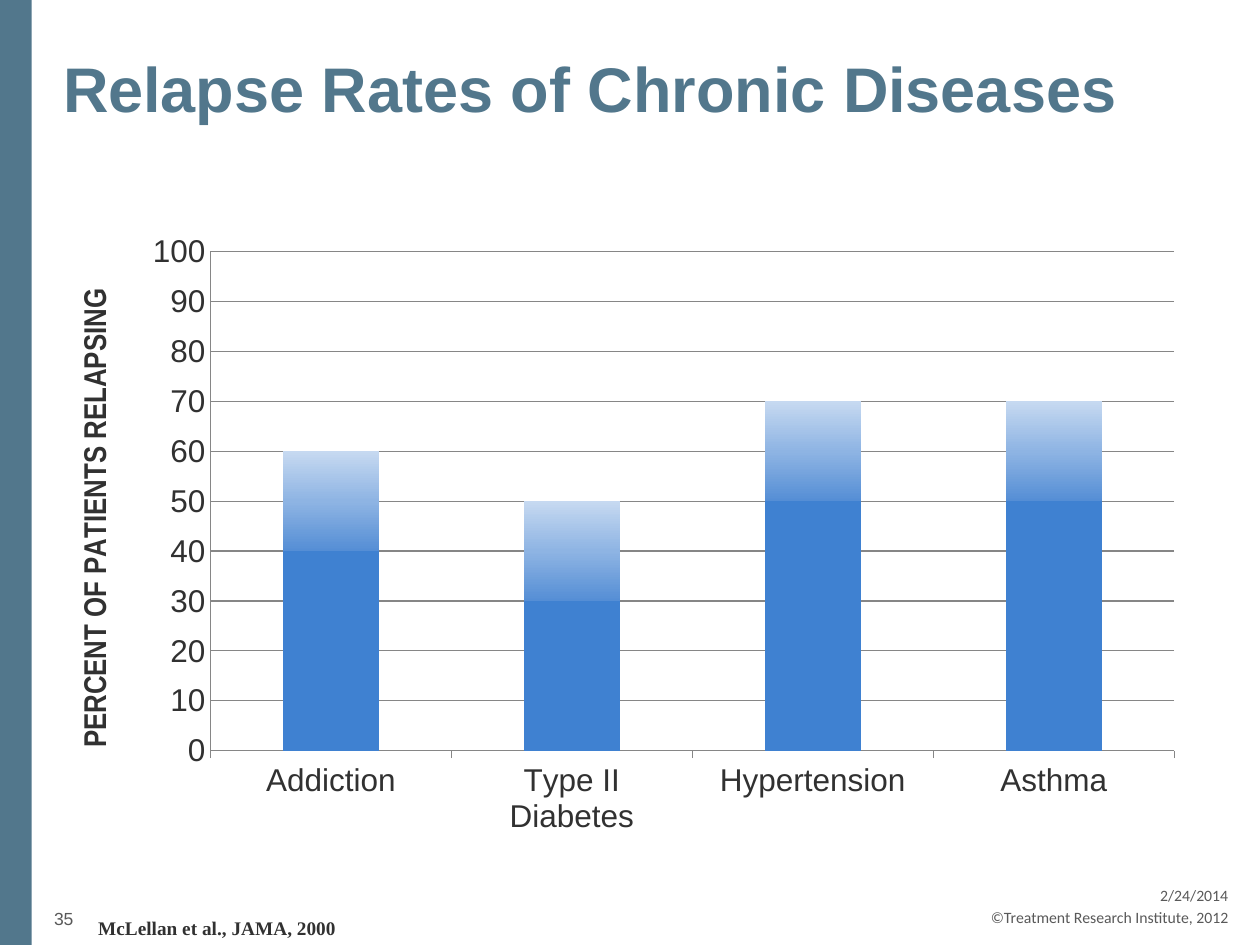
from dataclasses import dataclass
from lxml import etree
from pptx import Presentation
from pptx.chart import data as chartdata
from pptx.dml.color import RGBColor
from pptx.enum import chart as charts, shapes, text
from pptx.oxml import parse_xml
from pptx.oxml.ns import nsdecls, qn
from pptx.util import Cm, Pt


@dataclass
class Theme:
    accent = RGBColor.from_string("52778C")
    ink = RGBColor.from_string("313131")
    muted = RGBColor.from_string("595959")
    grid = RGBColor.from_string("868686")
    bar = RGBColor.from_string("3F81D1")
    gradient = ((0, "C6D9F1"), (50, "8EB4E3"), (100, "558ED5"))
    title_size = Pt(36)
    chart_size = Pt(18)
    source_size = Pt(11)
    number_size = Pt(10)
    footer_size = Pt(9)


theme = Theme()


def style(font, name, size, color, bold=False):
    font.name = name
    font.size = size
    font.bold = bold
    font.color.rgb = color


def place(parent, index, **values):
    for old in parent.findall(qn("c:layout")):
        parent.remove(old)
    layout = parse_xml(f"<c:layout {nsdecls('c')}><c:manualLayout/></c:layout>")
    for tag, value in values.items():
        etree.SubElement(layout[0], qn(f"c:{tag}")).set("val", str(value))
    parent.insert(index, layout)


deck = Presentation()
deck.slide_width, deck.slide_height = Cm(25.4), Cm(19.05)
page = deck.slides.add_slide(deck.slide_layouts[5])

band = page.shapes.add_shape(shapes.MSO_SHAPE.RECTANGLE, 0, 0, Cm(0.64), deck.slide_height)
band.shadow.inherit = False
band.fill.solid()
band.fill.fore_color.rgb = theme.accent
band.line.fill.background()

title = page.shapes.title
title.left, title.top, title.width, title.height = Cm(1.27), Cm(0.76), Cm(22.86), Cm(1.98)
frame = title.text_frame
frame.text = "Relapse Rates of Chronic Diseases"
frame.margin_left = 0
frame.vertical_anchor = text.MSO_ANCHOR.MIDDLE
frame.auto_size = text.MSO_AUTO_SIZE.NONE
frame.paragraphs[0].alignment = text.PP_ALIGN.LEFT
style(frame.paragraphs[0].font, "Arial", theme.title_size, theme.accent, True)

rates = chartdata.CategoryChartData()
rates.categories = ["Addiction", "Type II Diabetes", "Hypertension", "Asthma"]
rates.add_series("Series 1", (40, 30, 50, 50))
rates.add_series("Series 2", (20, 20, 20, 20))
chart = page.shapes.add_chart(
    charts.XL_CHART_TYPE.COLUMN_STACKED, Cm(1.27), Cm(4.45), Cm(22.86), Cm(12.57), rates
).chart
chart.has_legend = False
chart.has_title = False
style(chart.font, "Arial", theme.chart_size, theme.ink)

plot = chart.plots[0]
plot.vary_by_categories = False
plot.gap_width, plot.overlap = 150, 100
lower, upper = plot.series
lower.format.fill.solid()
lower.format.fill.fore_color.rgb = theme.bar
upper.format.fill.gradient()
upper.format.fill.gradient_angle = 270
stops = upper.format.fill._fill._gradFill.find(qn("a:gsLst"))
for stop in list(stops):
    stops.remove(stop)
for position, color in theme.gradient:
    stop = etree.SubElement(stops, qn("a:gs"), pos=str(position * 1000))
    etree.SubElement(stop, qn("a:srgbClr"), val=color)

categories, values = chart.category_axis, chart.value_axis
categories.major_tick_mark = charts.XL_TICK_MARK.OUTSIDE
values.major_tick_mark = charts.XL_TICK_MARK.INSIDE
values.minimum_scale, values.maximum_scale, values.major_unit = 0, 100, 10
values.has_major_gridlines = True
for line in (categories.format.line, values.format.line, values.major_gridlines.format.line):
    line.color.rgb = theme.grid
    line.width = Pt(0.75)

caption = values.axis_title
caption.text_frame.text = "PERCENT OF PATIENTS RELAPSING"
style(caption.text_frame.paragraphs[0].font, "Arial Narrow", theme.chart_size, theme.ink, True)
caption.text_frame._txBody.bodyPr.set("rot", "-5400000")
caption.text_frame._txBody.bodyPr.set("vert", "horz")
place(caption._element, 1, xMode="edge", yMode="edge", x=0.01, y=0.1)
place(chart._chartSpace.chart.plotArea, 0, layoutTarget="inner", xMode="edge", yMode="edge",
      x=0.13, y=0.05, w=0.85, h=0.8)

left, right = text.PP_ALIGN.LEFT, text.PP_ALIGN.RIGHT
top, middle = text.MSO_ANCHOR.TOP, text.MSO_ANCHOR.MIDDLE
notes = (
    ("©Treatment Research Institute, 2012", (16.71, 18.29, 8.05, 0.56), right, top, 0,
     ("Calibri", theme.footer_size, theme.muted)),
    ("2/24/2014", (16.71, 17.86, 8.05, 0.56), right, top, 0,
     ("Calibri", theme.footer_size, theme.muted)),
    ("McLellan et al., JAMA, 2000", (1.73, 18.34, 10.11, 0.74), left, top, 0.25,
     ("Times New Roman", theme.source_size, theme.ink, True)),
    ("35", (0.84, 18.01, 5.92, 1.02), left, middle, 0.25,
     ("Arial", theme.number_size, theme.muted)),
)
for words, bounds, alignment, anchor, inset, font in notes:
    box = page.shapes.add_textbox(*map(Cm, bounds))
    frame = box.text_frame
    frame.word_wrap = True
    frame.vertical_anchor = anchor
    frame.margin_left = frame.margin_right = Cm(inset)
    frame.margin_top = frame.margin_bottom = Cm(inset / 2)
    para = frame.paragraphs[0]
    para.text = words
    para.alignment = alignment
    style(para.font, *font)

deck.save("out.pptx")
